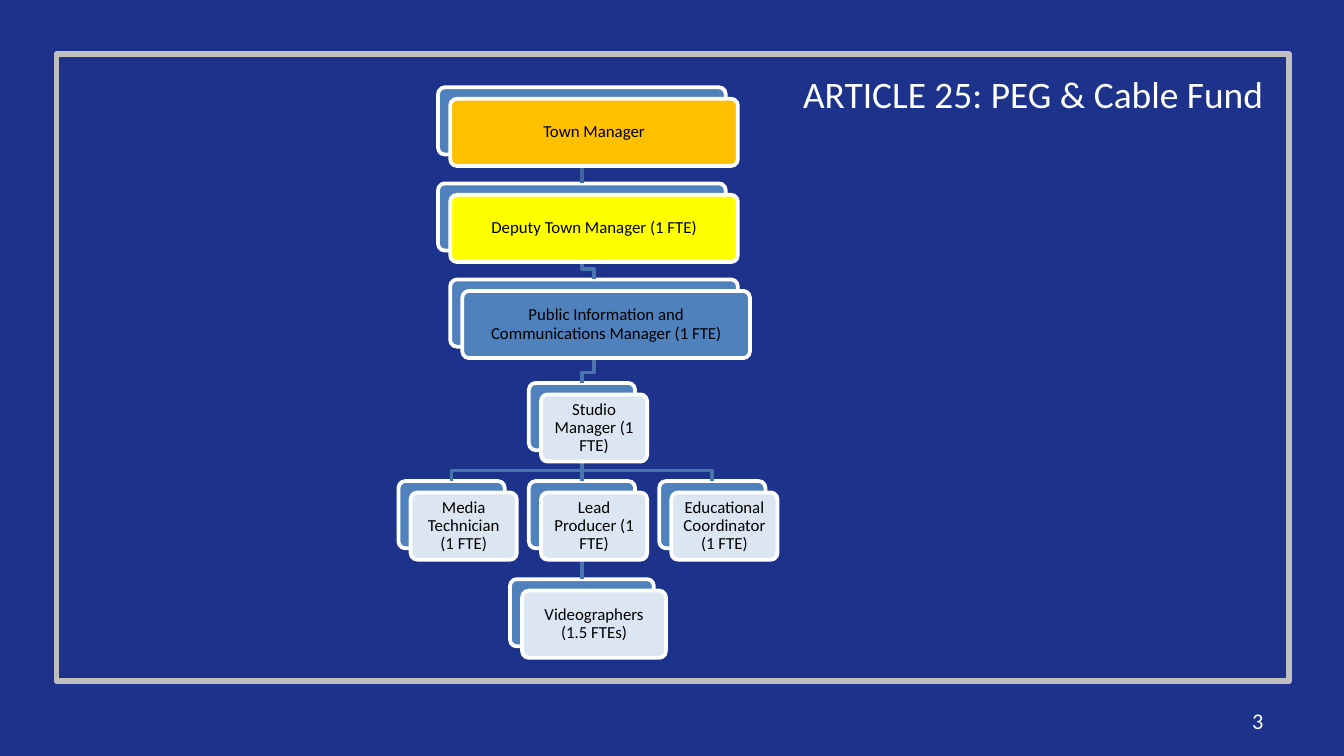
from dataclasses import dataclass

from lxml.etree import SubElement
from pptx import Presentation
from pptx.dml.color import RGBColor
from pptx.enum.shapes import MSO_CONNECTOR, MSO_SHAPE
from pptx.enum.text import MSO_ANCHOR, PP_ALIGN
from pptx.oxml.ns import qn
from pptx.util import Inches, Pt

COLORS = {
    "navy": "1D328B", "silver": "BFBFBF", "white": "FFFFFF", "black": "000000",
    "blue": "4F81BD", "pale": "DCE6F2", "gold": "FFC000", "yellow": "FFFF00",
    "link": "4875AC", "top_link": "3F6797",
}
FONT = "Calibri"
CELL = Inches(0.1)  # the page is a grid of 100 columns, one tenth of an inch each
CARD_HEIGHT = 5
CARD_SHIFT = (0.9, 0.85)  # front card against the back card
BEND_RISE = 0.78  # height of a link's bend above the lower card
AXIS = 43.3  # column on which the chart is centred
SIBLING_STEP = 9.7
WIDE, MIDDLE, NARROW = 21.4, 10.7, 7.9


def color(name):
    return RGBColor.from_string(COLORS[name])


def grid(*cells):
    return [round(cell * CELL) for cell in cells]


def write(shape, text, size=9, ink="black", align=PP_ALIGN.CENTER,
          anchor=MSO_ANCHOR.MIDDLE, margins=(0.1, 0.05), spacing=None):
    frame = shape.text_frame
    frame.word_wrap = True
    frame.vertical_anchor = anchor
    frame.margin_left = frame.margin_right = Inches(margins[0])
    frame.margin_top = frame.margin_bottom = Inches(margins[1])
    para = frame.paragraphs[0]
    para.alignment = align
    para.line_spacing = spacing
    span = para.add_run()
    span.text = text
    span.font.name = FONT
    span.font.size = Pt(size)
    span.font.color.rgb = color(ink)


@dataclass
class Position:
    """One job in the chart; center and top belong to its back card."""
    title: str
    center: float
    top: float
    width: float
    fill: str
    parent: str = ""

    @property
    def bottom(self):
        return self.top + CARD_HEIGHT


class ChartPage:
    def __init__(self, deck):
        self.page = deck.slides.add_slide(deck.slide_layouts[6])
        self.page.background.fill.solid()
        self.page.background.fill.fore_color.rgb = color("navy")
        self.shapes = self.page.shapes

    def frame(self, left, top, width, height):
        border = self.shapes.add_shape(MSO_SHAPE.RECTANGLE, *grid(left, top, width, height))
        border.shadow.inherit = False
        border.fill.background()
        border.line.color.rgb = color("silver")
        border.line.width = Pt(3)

    def label(self, text, left, top, width, height, **style):
        box = self.shapes.add_textbox(*grid(left, top, width, height))
        write(box, text, ink="white", align=PP_ALIGN.RIGHT, **style)

    def card(self, position, fill, shift=(0, 0)):
        left = position.center - position.width / 2 + shift[0]
        card = self.shapes.add_shape(
            MSO_SHAPE.ROUNDED_RECTANGLE,
            *grid(left, position.top + shift[1], position.width, CARD_HEIGHT))
        card.adjustments[0] = 0.1
        card.shadow.inherit = False
        card.fill.solid()
        card.fill.fore_color.rgb = color(fill)
        card.line.color.rgb = color("white")
        card.line.width = Pt(2)
        return card

    def front_card(self, position):
        card = self.card(position, position.fill, CARD_SHIFT)
        write(card, position.title, margins=(0.05, 0.05), spacing=0.9)

    def straight_link(self, upper, lower, stroke):
        link = self.shapes.add_connector(MSO_CONNECTOR.STRAIGHT, 0, 0, 0, 0)
        link.begin_connect(upper, 2)
        link.end_connect(lower, 0)
        SubElement(link.element.spPr, qn("a:effectLst"))
        self.stroke(link, stroke)

    def bent_link(self, parent, child):
        bend = child.top - BEND_RISE
        builder = self.shapes.build_freeform(*grid(parent.center, parent.bottom))
        builder.add_line_segments(
            [grid(parent.center, bend), grid(child.center, bend),
             grid(child.center, child.top)], close=False)
        link = builder.convert_to_shape()
        link.shadow.inherit = False
        link.fill.background()
        self.stroke(link, "link")

    def stroke(self, link, name):
        link.line.color.rgb = color(name)
        link.line.width = Pt(2)

    def organization(self, positions):
        """Draw back cards, then links, then front cards, so links run behind the fronts."""
        by_title = {position.title: position for position in positions}
        backs = {title: self.card(position, "blue") for title, position in by_title.items()}
        for child in positions:
            if not child.parent:
                continue
            parent = by_title[child.parent]
            if parent.center == child.center:
                stroke = "link" if parent.parent else "top_link"
                self.straight_link(backs[parent.title], backs[child.title], stroke)
            else:
                self.bent_link(parent, child)
        for position in positions:
            self.front_card(position)


TOWN = "Town Manager"
DEPUTY = "Deputy Town Manager (1 FTE)"
INFORMATION = "Public Information and Communications Manager (1 FTE)"
STUDIO = "Studio Manager (1 FTE)"
PRODUCER = "Lead Producer (1 FTE)"

POSITIONS = [
    Position(TOWN, AXIS, 6.5, WIDE, "gold"),
    Position(DEPUTY, AXIS, 13.65, WIDE, "yellow", TOWN),
    Position(INFORMATION, AXIS + CARD_SHIFT[0], 20.8, WIDE, "blue", DEPUTY),
    Position(STUDIO, AXIS, 28.5, NARROW, "pale", INFORMATION),
    Position("Media Technician (1 FTE)", AXIS - SIBLING_STEP, 35.8, NARROW, "pale", STUDIO),
    Position(PRODUCER, AXIS, 35.8, NARROW, "pale", STUDIO),
    Position("Videographers (1.5 FTEs)", AXIS, 43.1, MIDDLE, "pale", PRODUCER),
    Position("Educational Coordinator (1 FTE)", AXIS + SIBLING_STEP, 35.8, NARROW, "pale", STUDIO),
]


def main():
    deck = Presentation()
    deck.slide_width = Inches(10)
    deck.slide_height = deck.slide_width * 9 // 16
    page = ChartPage(deck)
    page.frame(4.2, 4, 91.7, 46.7)
    page.label("3", 71.7, 52.1, 23.3, 3, size=12)
    page.label("ARTICLE 25: PEG & Cable Fund", 50, 4.8, 45, 4.4, size=20, anchor=MSO_ANCHOR.TOP)
    page.organization(POSITIONS)
    deck.save("out.pptx")


if __name__ == "__main__":
    main()
